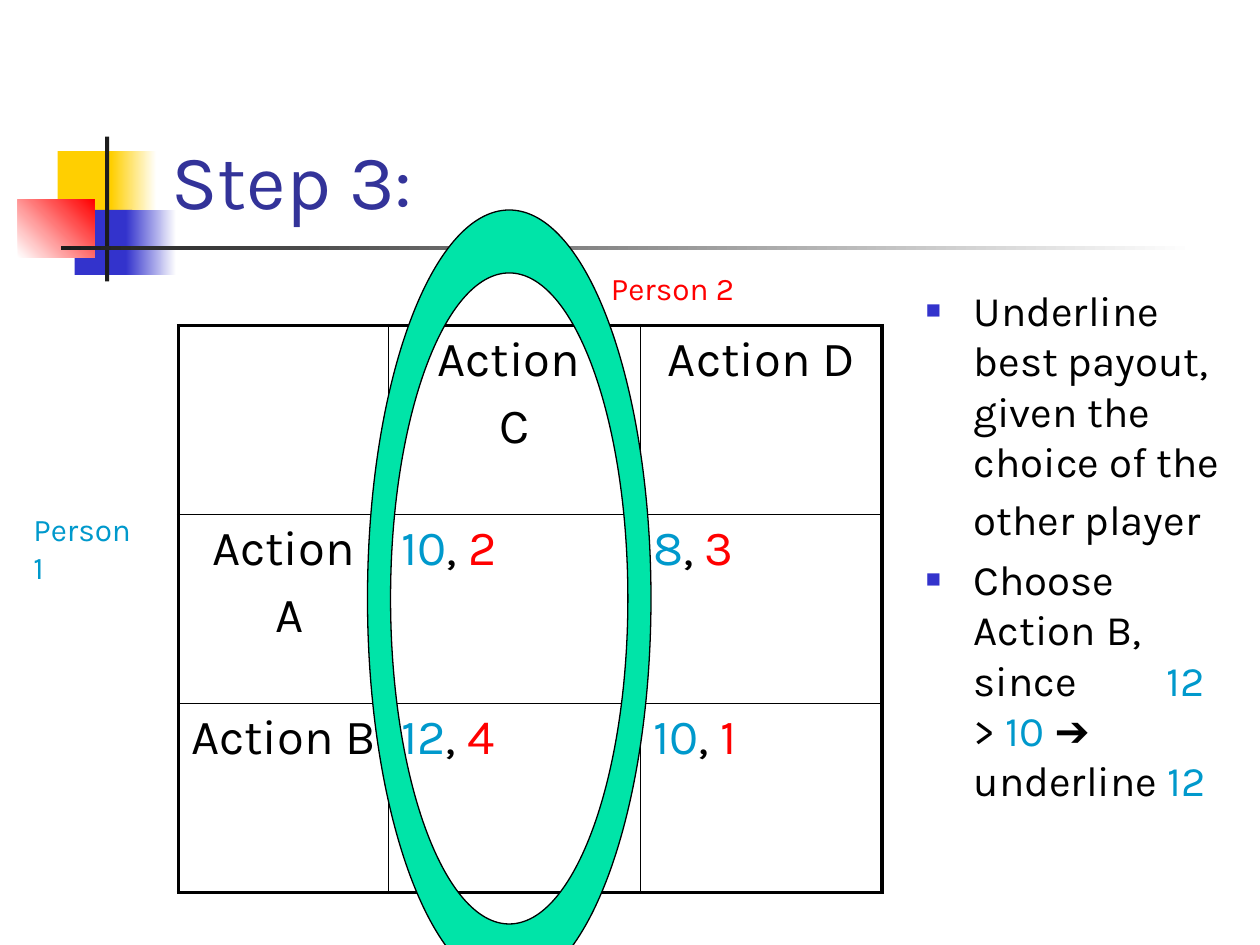
from lxml import etree
from pptx import Presentation
from pptx import util as u
from pptx.dml.color import RGBColor
from pptx.enum import shapes, text
from pptx.oxml import ns

COLS, ROWS = 120, 90
UNIT = u.Inches(10) / COLS
KAPPA = 0.55
FONT = "Karla"
BLACK = RGBColor(0x00, 0x00, 0x00)
WHITE = RGBColor(0xFF, 0xFF, 0xFF)
INK = RGBColor(0x1C, 0x1C, 0x1C)
GOLD = RGBColor(0xFF, 0xCF, 0x01)
BLUE = RGBColor(0x33, 0x33, 0xCC)
NAVY = RGBColor(0x33, 0x33, 0x99)
RED = RGBColor(0xFF, 0x00, 0x00)
CYAN = RGBColor(0x00, 0x99, 0xCC)
GREEN = RGBColor(0x00, 0xE4, 0xA8)


def grid(*vals):
    return [u.Emu(round(v * UNIT)) for v in vals]


def node(par, tag, **attrs):
    item = etree.SubElement(par, ns.qn(tag))
    for key, val in attrs.items():
        item.set(key, str(val))
    return item


def write(para, runs, size, gap=0.2):
    para.space_before = u.Pt(size * gap)
    for words, color in runs:
        run = para.add_run()
        run.text = words
        run.font.size = u.Pt(size)
        run.font.name = FONT
        run.font.color.rgb = color


def fill(frame, paras, size, gap=0.2, align=text.PP_ALIGN.LEFT):
    for i, runs in enumerate(paras):
        para = frame.add_paragraph() if i else frame.paragraphs[0]
        para.alignment = align
        write(para, runs, size, gap)


def block(slide, box, start, end=None, angle=0):
    shape = slide.shapes.add_shape(shapes.MSO_SHAPE.RECTANGLE, *grid(*box))
    shape.shadow.inherit = False
    shape.line.fill.background()
    if end is None:
        shape.fill.solid()
        shape.fill.fore_color.rgb = start
        return
    shape.fill.gradient()
    shape.fill.gradient_angle = angle
    for stop, color in zip(shape.fill.gradient_stops, (start, end)):
        stop.color.rgb = color


def draw_motif(slide, left, top):
    parts = [
        ((3.8, 1.4, 5.8, 6.2), GOLD),
        ((8.9, 1.4, 4.3, 6.2), GOLD, WHITE),
        ((5.4, 7, 5.5, 6.2), BLUE),
        ((10.3, 7, 4.8, 6.2), BLUE, WHITE),
        ((0, 6, 7.3, 5.5), WHITE, RED, 45),
        ((8.3, 0, 0.4, 13.8), INK),
        ((4.1, 10.4, 108, 0.4), INK, WHITE),
    ]
    for (x, y, w, h), *tones in parts:
        block(slide, (left + x, top + y, w, h), *tones)


def set_title(slide, box):
    title = slide.shapes.title
    title.left, title.top, title.width, title.height = grid(*box)
    frame = title.text_frame
    frame.vertical_anchor = text.MSO_ANCHOR.BOTTOM
    frame.auto_size = text.MSO_AUTO_SIZE.NONE
    fill(frame, [[("Step 3:", NAVY)]], 44, 0)
    slide.shapes._spTree.append(title._element)


def add_text(slide, box, paras, size, gap):
    frame = slide.shapes.add_textbox(*grid(*box)).text_frame
    frame.word_wrap = True
    fill(frame, paras, size, gap)
    return frame


def draw_notes(slide, box):
    paras = [
        [("Underline best payout, given the choice of the other player", BLACK), (" ", BLACK)],
        [("Choose Action B, since", BLACK), (" ", BLACK), ("12", CYAN), (" > ", BLACK),
         ("10 ", CYAN), ("➔ underline ", BLACK), ("12", CYAN)],
    ]
    frame = add_text(slide, box, paras, 24, 0.2)
    first, second = frame.paragraphs
    first.runs[1].font.size = u.Pt(28)
    second.runs[1].font._element.set("spc", "4550")
    for para in (first, second):
        props = para._p.get_or_add_pPr()
        props.set("marL", str(u.Inches(0.38)))
        props.set("indent", str(-u.Inches(0.38)))
        node(node(props, "a:buClr"), "a:srgbClr", val=BLUE)
        node(props, "a:buSzPct", val=60000)
        node(props, "a:buFont", typeface="Arial")
        node(props, "a:buChar", char="■")


def edge(cell, row, col, last):
    props = cell._tc.get_or_add_tcPr()
    outer = {"L": col == 0, "R": col == last, "T": row == 0, "B": row == last}
    for side, thick in outer.items():
        line = node(props, "a:ln" + side, w=u.Pt(2.25 if thick else 1))
        node(node(line, "a:solidFill"), "a:srgbClr", val=BLACK)
    cell.fill.background()


def payoff(one, two):
    return [[(one, CYAN), (", ", BLACK), (two, RED)]]


def label(*lines):
    return [[(line, BLACK)] for line in lines]


def draw_table(slide, box, widths):
    cells = [
        [[], label("Action ", "C"), label("Action D")],
        [label("Action", " A"), payoff("10", "2"), payoff("8", "3")],
        [label("Action B"), payoff("12", "4"), payoff("10", "1")],
    ]
    size = len(cells)
    table = slide.shapes.add_table(size, size, *grid(*box)).table
    table.first_row = table.horz_banding = False
    for col, width in zip(table.columns, grid(*widths)):
        col.width = width
    for r, row in enumerate(cells):
        table.rows[r].height = grid(box[3] / size)[0]
        for c, paras in enumerate(row):
            cell = table.cell(r, c)
            head = r == 0 or c == 0
            align = text.PP_ALIGN.CENTER if head else text.PP_ALIGN.LEFT
            fill(cell.text_frame, paras, 28, align=align)
            edge(cell, r, c, size - 1)


def tips(mid, wide, high, turn):
    x, y = mid
    sides = [(x - wide, y), (x, y - turn * high), (x + wide, y), (x, y + turn * high)]
    return [grid(*side) for side in sides + sides[:1]]


def bend(line, start, end, flat):
    knee = (end[0], start[1]) if flat else (start[0], end[1])
    line.tag = ns.qn("a:cubicBezTo")
    line.clear()
    for tip in (start, end):
        x, y = (round(t + KAPPA * (k - t)) for t, k in zip(tip, knee))
        node(line, "a:pt", x=x, y=y)
    node(line, "a:pt", x=end[0], y=end[1])


def round_off(shape):
    pen, flat = None, False
    for point in list(shape._element.iter(ns.qn("a:pt"))):
        spot = int(point.get("x")), int(point.get("y"))
        step = point.getparent()
        if step.tag == ns.qn("a:moveTo"):
            flat = False
        else:
            spare = etree.Element(ns.qn("a:cubicBezTo"))
            step.getparent().replace(step, spare)
            bend(spare, pen, spot, flat)
            flat = not flat
        pen = spot


def draw_ring(slide, box, side, cap):
    x, y, w, h = box
    mid = (x + w / 2, y + h / 2)
    outer = tips(mid, w / 2, h / 2, 1)
    inner = tips(mid, w / 2 - side, h / 2 - cap, -1)
    path = slide.shapes.build_freeform(*outer[0], scale=1.0)
    path.add_line_segments(outer[1:], close=True)
    path.move_to(*inner[0])
    path.add_line_segments(inner[1:], close=True)
    ring = path.convert_to_shape()
    round_off(ring)
    ring.shadow.inherit = False
    ring.fill.solid()
    ring.fill.fore_color.rgb = GREEN
    ring.line.color.rgb = BLACK
    ring.line.width = u.Pt(0.75)


def main():
    deck = Presentation()
    deck.slide_width, deck.slide_height = grid(COLS, ROWS)
    slide = deck.slides.add_slide(deck.slide_layouts[5])
    draw_motif(slide, 1.7, 13)
    set_title(slide, (15.1, 2.8, 102.2, 19.2))
    draw_notes(slide, (87, 26.5, 30.5, 54))
    draw_table(slide, (17, 31, 67, 54), (20, 24, 23))
    add_text(slide, (2, 48, 12, 8.4), [[("Person 1", CYAN)]], 18, 0.5)
    add_text(slide, (57, 25, 17, 4.8), [[("Person 2", RED)]], 18, 0.5)
    draw_ring(slide, (35, 20, 27, 74), 2.2, 6)
    deck.save("out.pptx")


if __name__ == "__main__":
    main()
